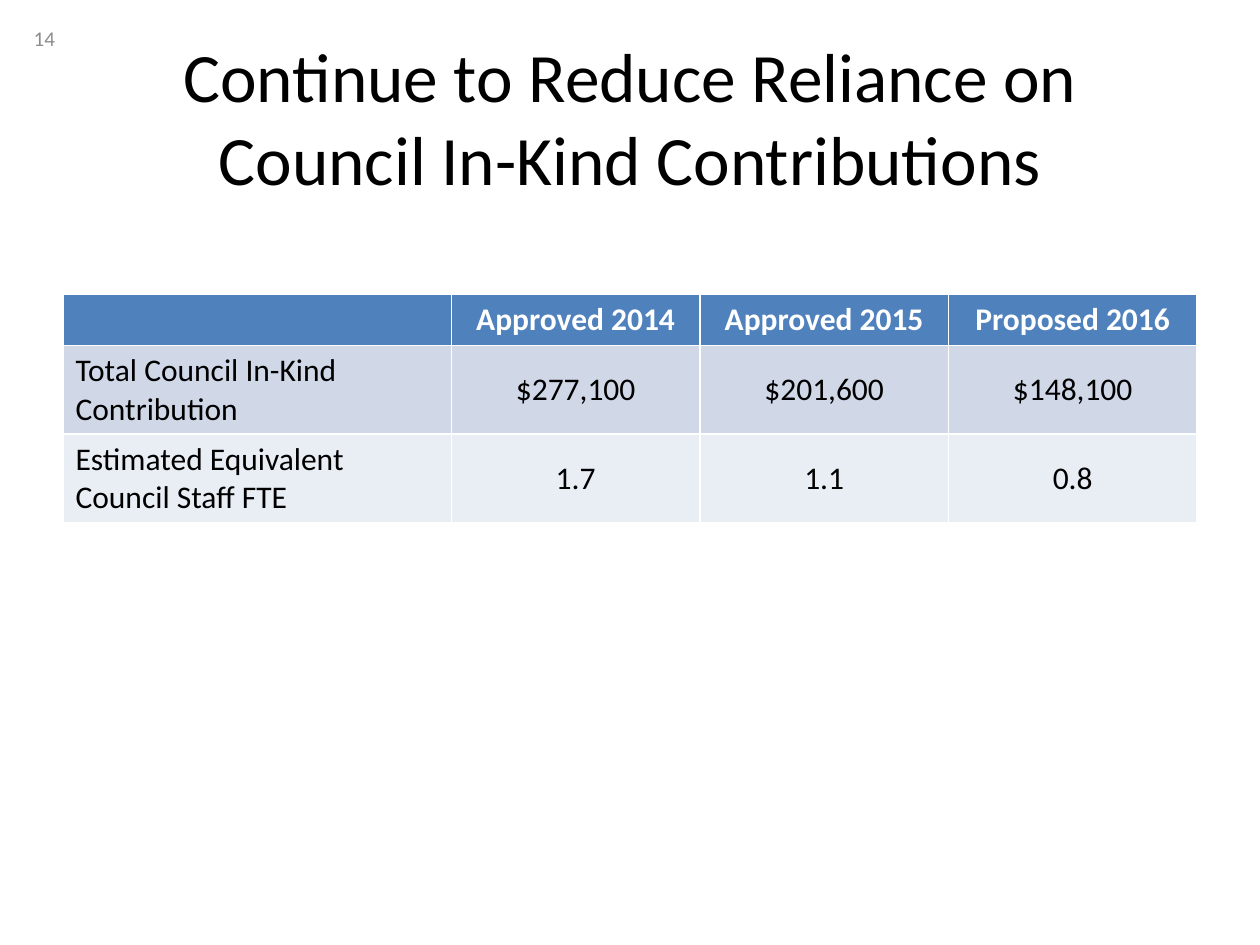
from pptx import Presentation
from pptx.dml.color import RGBColor
from pptx.enum.text import MSO_ANCHOR, PP_ALIGN
from pptx.util import Cm, Pt


def color(value):
    return RGBColor.from_string(value)


def write(frame, text, size=18, fill="000000", bold=False, align=PP_ALIGN.CENTER):
    frame.word_wrap = True
    paragraph = frame.paragraphs[0]
    paragraph.alignment = align
    run = paragraph.add_run()
    run.text = text
    run.font.name = "Calibri"
    run.font.size = Pt(size)
    run.font.bold = bold
    run.font.color.rgb = color(fill)


presentation = Presentation()
presentation.slide_width = Cm(25.4)
presentation.slide_height = Cm(19.05)
slide = presentation.slides.add_slide(presentation.slide_layouts[6])

title = slide.shapes.add_textbox(Cm(1.27), Cm(0.76), Cm(22.86), Cm(3.18))
title.text_frame.vertical_anchor = MSO_ANCHOR.MIDDLE
write(title.text_frame, "Continue to Reduce Reliance on Council In-Kind Contributions", size=39.6)

slide_number = slide.shapes.add_textbox(Cm(0.43), Cm(0.25), Cm(5.92), Cm(1.02))
slide_number.text_frame.vertical_anchor = MSO_ANCHOR.MIDDLE
write(slide_number.text_frame, "14", size=12, fill="8C8C8C", align=PP_ALIGN.LEFT)

contributions = [
    ["", "Approved 2014", "Approved 2015", "Proposed 2016"],
    ["Total Council In-Kind Contribution", "$277,100", "$201,600", "$148,100"],
    ["Estimated Equivalent Council Staff FTE", "1.7", "1.1", "0.8"],
]
row_heights = [1.03, 1.79, 1.79]
row_fills = ["4F81BD", "D0D8E8", "E9EDF4"]
column_widths = [7.83, 5.01, 5.01, 5.01]

table = slide.shapes.add_table(
    len(contributions), len(column_widths), Cm(1.27), Cm(5.93), Cm(22.86), Cm(4.61)
).table
for column, width in zip(table.columns, column_widths):
    column.width = Cm(width)

for row_index, texts in enumerate(contributions):
    table.rows[row_index].height = Cm(row_heights[row_index])
    is_header = row_index == 0
    for column_index, text in enumerate(texts):
        cell = table.cell(row_index, column_index)
        cell.fill.solid()
        cell.fill.fore_color.rgb = color(row_fills[row_index])
        is_label = column_index == 0
        if not is_header and not is_label:
            cell.vertical_anchor = MSO_ANCHOR.MIDDLE
        if text:
            write(
                cell.text_frame,
                text,
                fill="FFFFFF" if is_header else "000000",
                bold=is_header,
                align=PP_ALIGN.LEFT if is_label else PP_ALIGN.CENTER,
            )

presentation.save("out.pptx")
